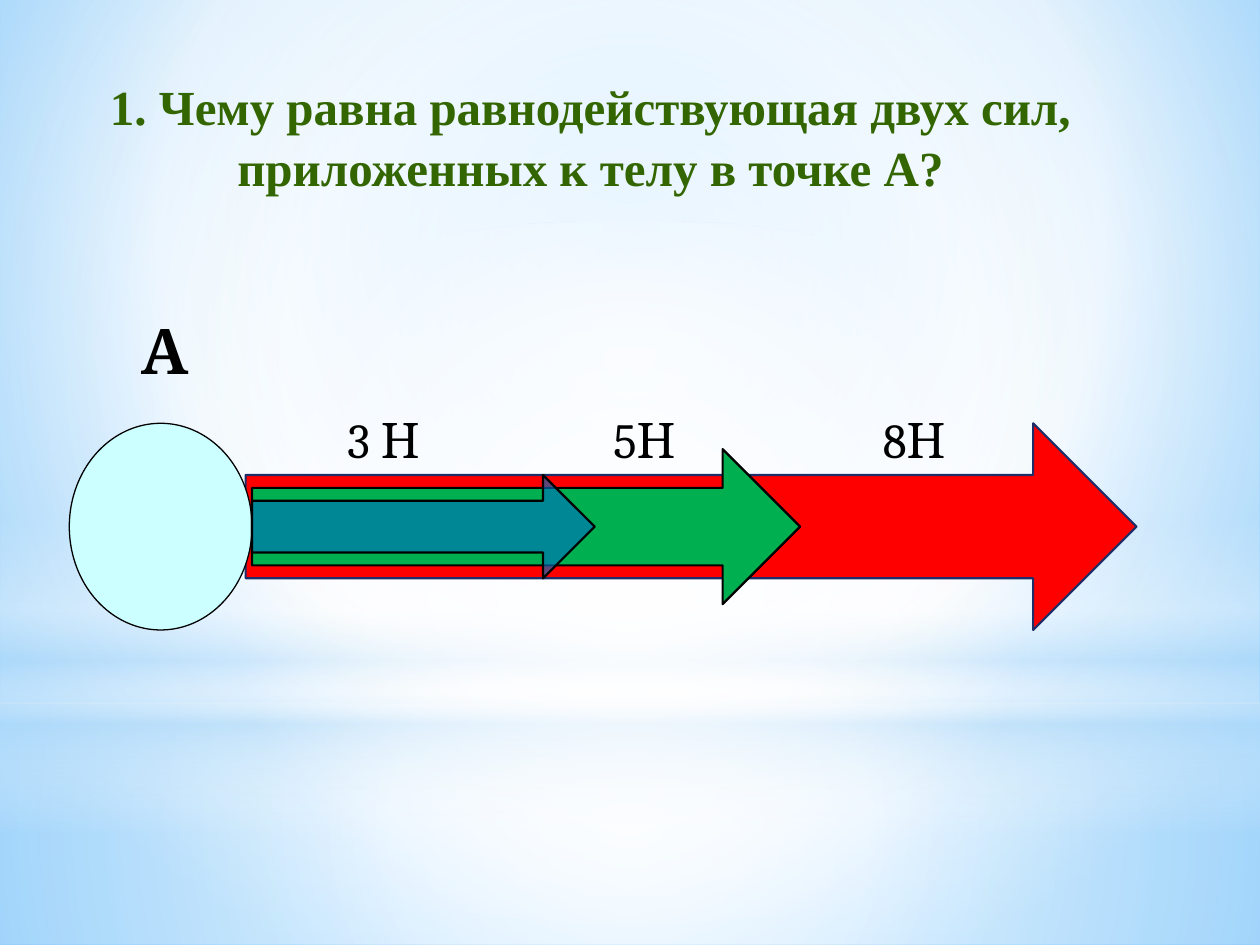
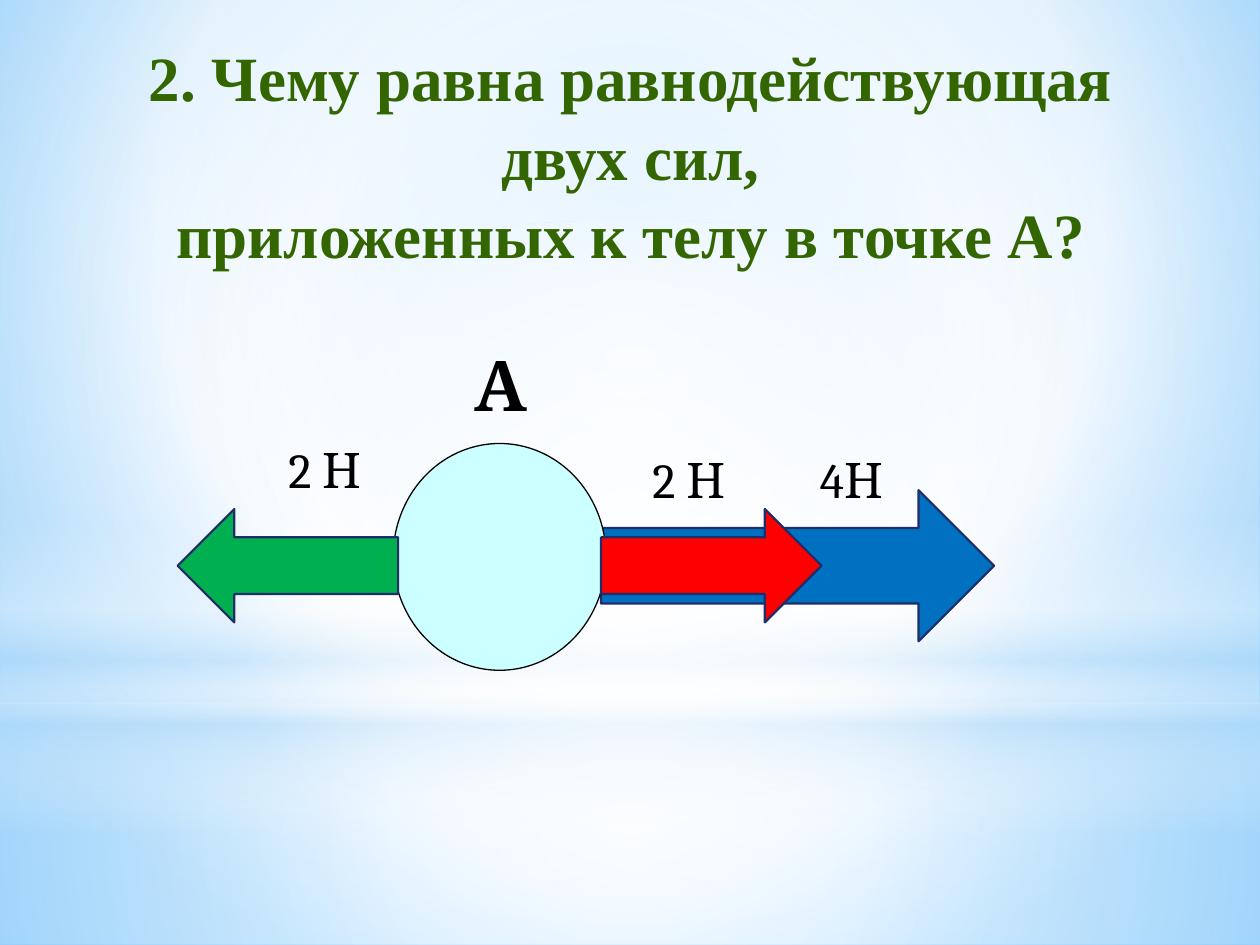
from dataclasses import dataclass

from lxml.etree import SubElement
from pptx import Presentation
from pptx.dml.color import RGBColor
from pptx.enum.shapes import MSO_SHAPE as Preset
from pptx.enum.text import MSO_ANCHOR as Anchor, MSO_AUTO_SIZE as AutoSize, PP_ALIGN as Align
from pptx.oxml import parse_xml
from pptx.oxml.ns import nsdecls, qn
from pptx.util import Inches, Pt

WHITE, SKY, BLACK = "FFFFFF", "B4DCFA", "000000"
TITLE_GREEN, BODY_CYAN, NAVY = "336600", "CCFFFF", "1F2E69"
RED, GREEN, BLUE = "FF0000", "00B050", "0070C0"
TITLE_FONT, LABEL_FONT = "Times New Roman", "Cambria"
CENTRE = (50, 50, 50, 50)


@dataclass
class Force:
    label: str
    label_offset: tuple
    length: float
    thickness: float
    color: str
    outline: str = NAVY
    overlap: float = 0
    leftward: bool = False
    behind: bool = False
    opacity: int = 100


def rgb(color):
    return RGBColor.from_string(color)


def inches(*lengths):
    return [Inches(length) for length in lengths]


def apply_gradient(fill, owner, stops, focus=None):
    fill.gradient()
    stop_xml = "".join(
        f'<a:gs pos="{position * 1000}"><a:srgbClr val="{color}">'
        f'<a:alpha val="{opacity * 1000}"/></a:srgbClr></a:gs>'
        for position, color, opacity in stops
    )
    if focus:
        sides = " ".join(f'{side}="{value * 1000}"' for side, value in zip("ltrb", focus))
        direction = f'<a:path path="circle"><a:fillToRect {sides}/></a:path>'
    else:
        direction = '<a:lin ang="5400000" scaled="0"/>'
    gradient = parse_xml(
        f'<a:gradFill {nsdecls("a")} rotWithShape="1"><a:gsLst>{stop_xml}</a:gsLst>{direction}</a:gradFill>'
    )
    current = next(owner.iter(qn("a:gradFill")))
    current.getparent().replace(current, gradient)


def add_backdrop(layout, slide):
    apply_gradient(
        layout.background.fill, layout.element,
        [(0, "9ED5FF", 100), (60, WHITE, 100), (100, "5BB9FF", 100)], (20, 10, 20, 60),
    )
    bands = [
        (Preset.RECTANGLE, 5.58, 1.92, [(0, WHITE, 91), (37, WHITE, 76), (100, SKY, 79)], CENTRE),
        (Preset.RECTANGLE, 0, 5.58, [(0, WHITE, 89), (48, WHITE, 62), (100, SKY, 79)], CENTRE),
        (Preset.RECTANGLE, 4.12, 2.5,
         [(0, WHITE, 0), (29, WHITE, 30), (45, SKY, 40), (55, WHITE, 26), (65, SKY, 60), (100, WHITE, 0)], None),
        (Preset.OVAL, 1.75, 5.58, [(0, WHITE, 100), (56, WHITE, 0)], CENTRE),
    ]
    for index, (preset, top, height, stops, focus) in enumerate(bands):
        band = slide.shapes.add_shape(preset, *inches(0, top, 10, height))
        band.shadow.inherit = False
        band.line.fill.background()
        apply_gradient(band.fill, band.element, stops, focus)
        band.element.nvSpPr.cNvPr.set("id", str(20 + index))
        layout.element.cSld.spTree.insert(2 + index, band.element)


def style_paragraph(paragraph, font_name, size, color, bold, align):
    paragraph.alignment = align
    font = paragraph.font
    font.name, font.size, font.bold = font_name, Pt(size), bold
    font.color.rgb = rgb(color)


def set_title(slide, box, text, size):
    title = slide.shapes.title
    title.left, title.top, title.width, title.height = inches(*box)
    frame = title.text_frame
    frame.text = text
    frame.word_wrap = True
    frame.auto_size = AutoSize.NONE
    frame.vertical_anchor = Anchor.MIDDLE
    for paragraph in frame.paragraphs:
        style_paragraph(paragraph, TITLE_FONT, size, TITLE_GREEN, True, Align.CENTER)
        paragraph.line_spacing = 1.04


def add_label(shapes, left, top, text, size=28, bold=False, height=0.57):
    frame = shapes.add_textbox(*inches(left, top, 1, height)).text_frame
    frame.text = text
    frame.word_wrap = True
    frame.vertical_anchor = Anchor.MIDDLE
    style_paragraph(frame.paragraphs[0], LABEL_FONT, size, BLACK, bold, Align.LEFT)


def add_outlined(shapes, preset, box, color, outline, line_width):
    shape = shapes.add_shape(preset, *inches(*box))
    shape.shadow.inherit = False
    shape.fill.solid()
    shape.fill.fore_color.rgb = rgb(color)
    shape.line.color.rgb = rgb(outline)
    shape.line.width = Pt(line_width)
    return shape


def add_force(slide, body_box, axis, force):
    left, top, width, _ = body_box
    shapes = slide.shapes.add_group_shape().shapes
    add_label(shapes, left + force.label_offset[0], top + force.label_offset[1], force.label)
    if force.leftward:
        preset, arrow_left = Preset.LEFT_ARROW, left + force.overlap - force.length
    else:
        preset, arrow_left = Preset.RIGHT_ARROW, left + width - force.overlap
    arrow_box = (arrow_left, axis - force.thickness / 2, force.length, force.thickness)
    arrow = add_outlined(shapes, preset, arrow_box, force.color, force.outline, 1.25)
    if force.opacity < 100:
        color = next(arrow.element.spPr.iter(qn("a:srgbClr")))
        SubElement(color, qn("a:alpha")).set("val", str(force.opacity * 1000))


def add_force_diagram(slide, body_box, axis, point_offset, point_size, point_height, forces):
    left, top = body_box[:2]
    add_label(slide.shapes, left + point_offset[0], top + point_offset[1], "А", point_size, True, point_height)
    for force in forces:
        if force.behind:
            add_force(slide, body_box, axis, force)
    add_outlined(slide.shapes, Preset.OVAL, body_box, BODY_CYAN, BLACK, 0.75)
    for force in forces:
        if not force.behind:
            add_force(slide, body_box, axis, force)


def add_same_direction_slide(slide):
    set_title(slide, (0.58, 0.55, 8.21, 1.04),
              "1. Чему равна равнодействующая двух сил,\nприложенных к телу в точке А?", 28)
    add_force_diagram(slide, (0.55, 3.36, 1.45, 1.64), 4.18, (0.47, -0.94), 36, 0.71, [
        Force("8Н", (6.36, -0.16), 7.07, 1.64, RED, overlap=0.05, behind=True),
        Force("5Н", (4.22, -0.16), 4.35, 1.23, GREEN, BLACK),
        Force("3 Н", (2.11, -0.16), 2.72, 0.82, BLUE, BLACK, opacity=63),
    ])


def add_opposite_direction_slide(slide):
    set_title(slide, (0.66, 0.27, 8.69, 1.9),
              "2. Чему равна равнодействующая двух сил,\nприложенных к телу в точке А?", 36)
    add_force_diagram(slide, (3.12, 3.52, 1.69, 1.8), 4.49, (0.55, -0.86), 40, 0.77, [
        Force("4Н", (3.29, 0), 3.12, 1.2, BLUE, overlap=0.04, behind=True),
        Force("2 Н", (-0.93, -0.08), 1.75, 0.9, GREEN, overlap=0.04, leftward=True),
        Force("2 Н", (1.96, 0), 1.75, 0.9, RED, overlap=0.04),
    ])


def main():
    presentation = Presentation()
    presentation.slide_width, presentation.slide_height = inches(10, 7.5)
    layout = presentation.slide_layouts[5]
    first, second = [presentation.slides.add_slide(layout) for _ in range(2)]
    add_backdrop(layout, first)
    add_same_direction_slide(first)
    add_opposite_direction_slide(second)
    presentation.save("out.pptx")


if __name__ == "__main__":
    main()
